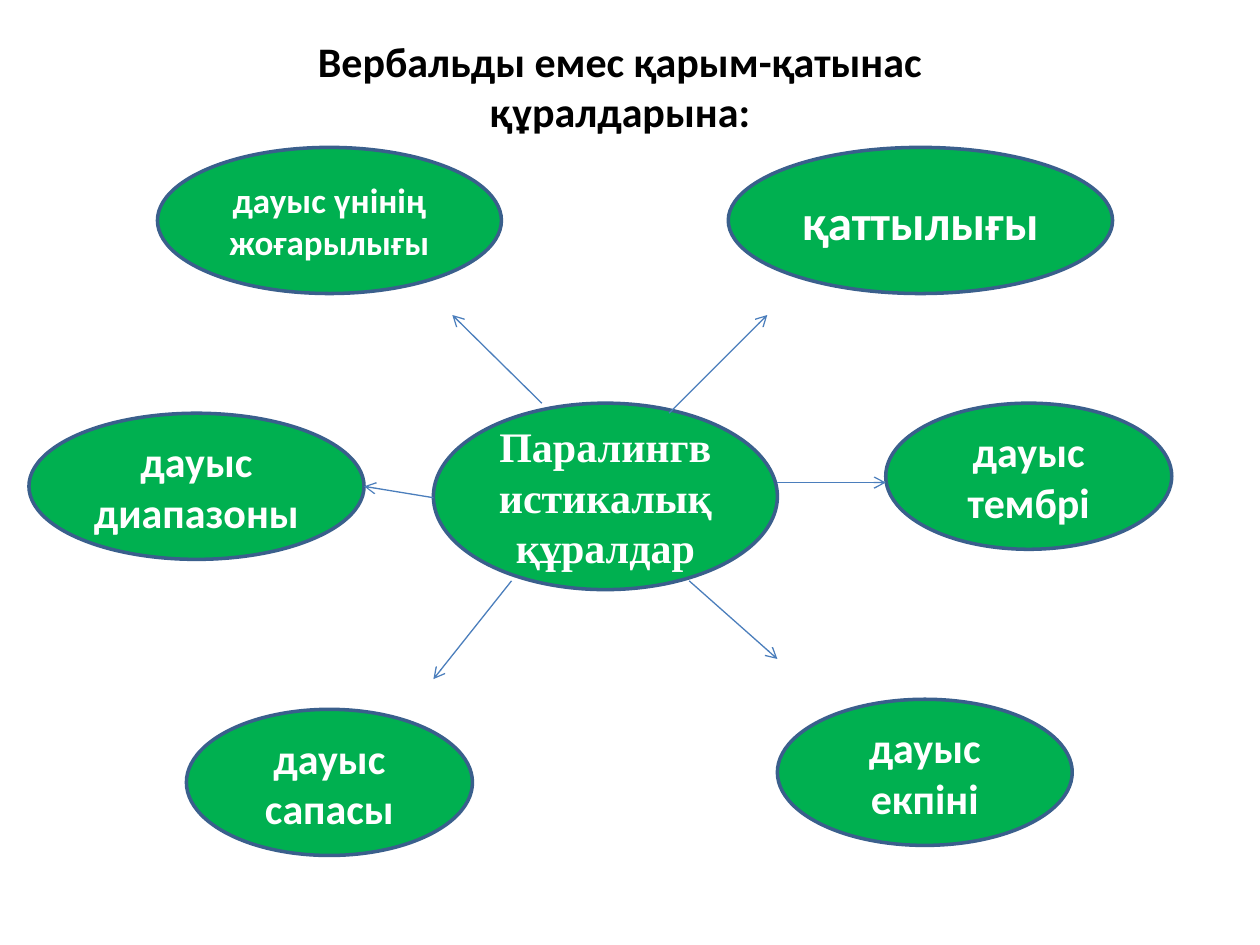
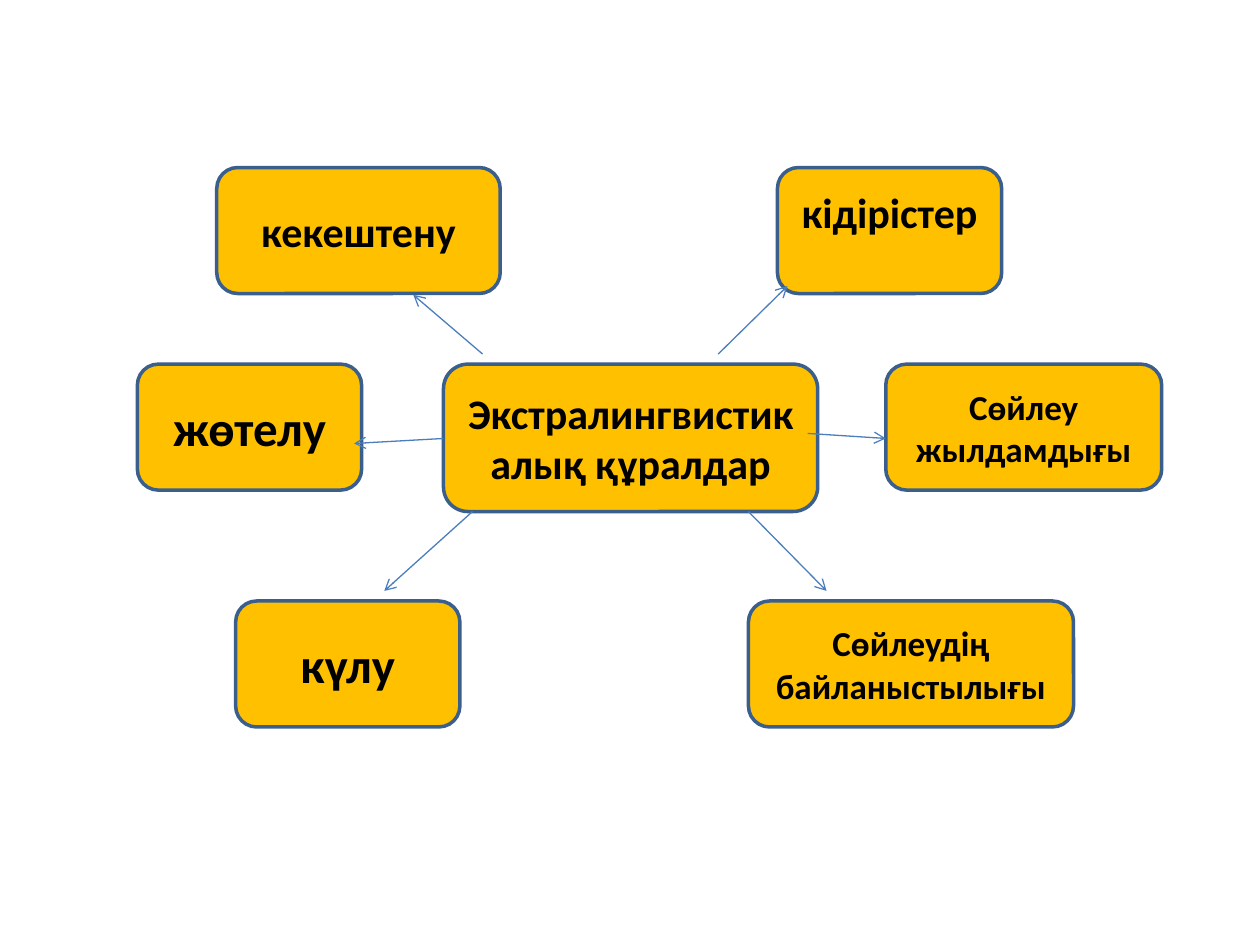
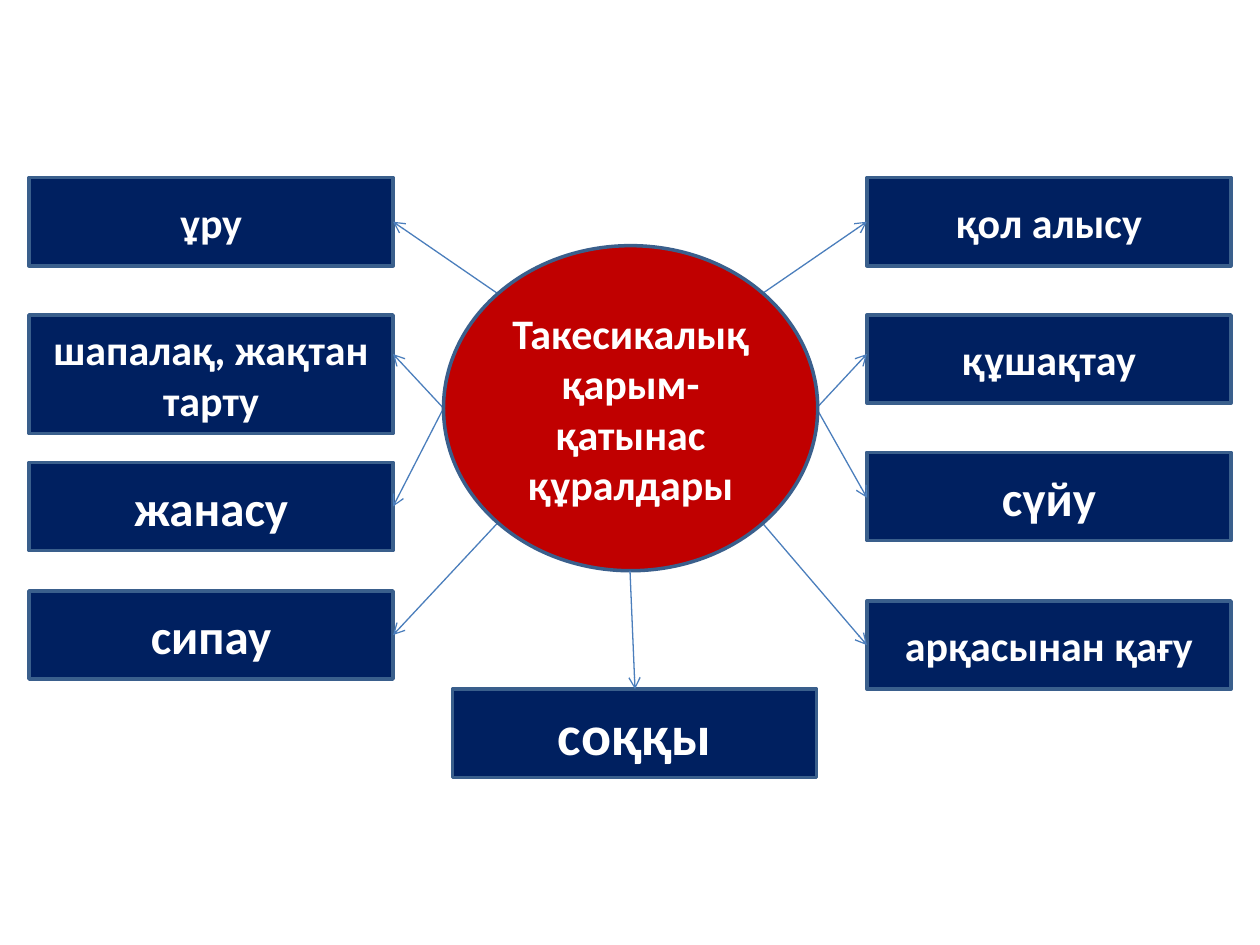
from dataclasses import dataclass

from lxml.etree import SubElement
from pptx import Presentation
from pptx.dml.color import RGBColor as Color
from pptx.enum.shapes import MSO_CONNECTOR as Connector, MSO_SHAPE as Shape
from pptx.enum.text import MSO_ANCHOR as Anchor, PP_ALIGN as Align
from pptx.oxml.ns import qn
from pptx.util import Inches, Pt


@dataclass(frozen=True)
class Theme:
    green: Color = Color.from_string("00B050")
    amber: Color = Color.from_string("FFC000")
    navy: Color = Color.from_string("002060")
    red: Color = Color.from_string("C00000")
    white: Color = Color.from_string("FFFFFF")
    black: Color = Color.from_string("000000")
    outline: Color = Color.from_string("3A5F8C")
    arrow: Color = Color.from_string("4B7EBC")
    sans: str = "Calibri"
    serif: str = "Times New Roman"
    small: int = 20
    medium: int = 24
    large: int = 28
    huge: int = 32


theme = Theme()


def add_node(page, kind, place, fill, text, size, color, font=theme.sans):
    """Add a shape with centred bold text; without a kind, a plain text box."""
    bounds = [Inches(length) for length in place]
    if kind is None:
        node = page.shapes.add_textbox(*bounds)
    else:
        node = page.shapes.add_shape(kind, *bounds)
        node.shadow.inherit = False
        node.fill.solid()
        node.fill.fore_color.rgb = fill
        node.line.color.rgb = theme.outline
        node.line.width = Pt(2)
        node.text_frame.vertical_anchor = Anchor.MIDDLE
    node.text_frame.word_wrap = True
    para = node.text_frame.paragraphs[0]
    para.text = text
    para.alignment = Align.CENTER
    para.font.name = font
    para.font.size = Pt(size)
    para.font.bold = True
    para.font.color.rgb = color
    return node


def add_arrow(page, start, end):
    """Add a thin line with an open arrowhead at its end."""
    points = [Inches(length) for length in (*start, *end)]
    arrow = page.shapes.add_connector(Connector.STRAIGHT, *points)
    arrow.line.color.rgb = theme.arrow
    arrow.line.width = Pt(0.75)
    SubElement(arrow.line._get_or_add_ln(), qn("a:tailEnd"), type="arrow")
    SubElement(arrow._element.spPr, qn("a:effectLst"))


deck = Presentation()
deck.slide_width, deck.slide_height = Inches(10), Inches(7.5)
blank = deck.slide_layouts[6]

# Slide 1: paralinguistic means
page = deck.slides.add_slide(blank)
add_node(page, None, (1.95, 0.23, 5.94, 0.91), None,
         "Вербальды емес қарым-қатынас құралдарына:", theme.medium, theme.black)

oval_height = 1.16
for left, top, width, text, size in [
    (5.78, 1.17, 3.05, "қаттылығы", theme.large),
    (7.03, 3.2, 2.27, "дауыс тембрі", theme.medium),
    (6.17, 5.55, 2.34, "дауыс екпіні", theme.medium),
    (1.25, 1.17, 2.73, "дауыс үнінің жоғарылығы", theme.small),
    (0.23, 3.28, 2.66, "дауыс диапазоны", theme.medium),
    (1.48, 5.63, 2.27, "дауыс сапасы", theme.medium),
]:
    add_node(page, Shape.OVAL, (left, top, width, oval_height),
             theme.green, text, size, theme.white)
add_node(page, Shape.OVAL, (3.44, 3.2, 2.73, 1.48), theme.green,
         "Паралингвистикалық құралдар", theme.medium, theme.white, theme.serif)

for start, end in [
    ((5.31, 3.28), (6.09, 2.5)),
    ((6.17, 3.83), (7.03, 3.83)),
    ((5.47, 4.61), (6.17, 5.23)),
    ((4.06, 4.61), (3.44, 5.39)),
    ((3.44, 3.95), (2.89, 3.86)),
    ((4.3, 3.2), (3.59, 2.5)),
]:
    add_arrow(page, start, end)

# Slide 2: extralinguistic means, in three rows
page = deck.slides.add_slide(blank)
add_node(page, Shape.ROUNDED_RECTANGLE, (3.52, 2.89, 2.97, 1.17), theme.amber,
         "Экстралингвистикалық құралдар", theme.medium, theme.black)

upper, middle, lower = 1.33, 2.89, 4.77
for left, top, width, text, size, space_below in [
    (6.17, upper, 1.78, "кідірістер", theme.medium, 0.35),
    (7.03, middle, 2.19, "Сөйлеу жылдамдығы", theme.small, 0.05),
    (5.94, lower, 2.58, "Сөйлеудің байланыстылығы", theme.small, 0.05),
    (1.72, upper, 2.25, "кекештену", theme.medium, 0.05),
    (1.09, middle, 1.78, "жөтелу", theme.large, 0.05),
    (1.87, lower, 1.78, "күлу", theme.large, 0.05),
]:
    box = add_node(page, Shape.ROUNDED_RECTANGLE, (left, top, width, 1),
                   theme.amber, text, size, theme.black)
    box.text_frame.margin_bottom = Inches(space_below)

for start, end in [
    ((5.7, 2.81), (6.25, 2.27)),
    ((6.41, 3.44), (7.03, 3.48)),
    ((5.94, 4.06), (6.56, 4.69)),
    ((3.75, 4.06), (3.05, 4.69)),
    ((3.52, 3.48), (2.81, 3.52)),
    ((3.83, 2.81), (3.28, 2.34)),
]:
    add_arrow(page, start, end)

# Slide 3: takesic means, two columns mirrored about the hub
page = deck.slides.add_slide(blank)
hub_center = 5
bar_width, bar_height = 2.89, 0.7
rim_points = [(1.05, 2.33), (1.48, 3.24), (1.48, 3.24), (1.05, 4.15)]
left_bars = [
    (1.41, bar_height, 1.76, "ұру", theme.medium),
    (2.5, 0.94, 2.81, "шапалақ, жақтан тарту", theme.medium),
    (3.67, bar_height, 4.02, "жанасу", theme.large),
    (4.69, bar_height, 5.04, "сипау", theme.large),
]
right_bars = [
    (1.41, bar_height, 1.76, "қол алысу", theme.medium),
    (2.5, bar_height, 2.81, "құшақтау", theme.medium),
    (3.59, bar_height, 3.95, "сүйу", theme.large),
    (4.77, bar_height, 5.12, "арқасынан қағу", theme.medium),
]
for side, left, inner_edge, bars in [
    (-1, 0.23, 3.12, left_bars),
    (1, 6.88, 6.88, right_bars),
]:
    for (reach, rim_y), (top, height, target_y, text, size) in zip(rim_points, bars):
        add_node(page, Shape.RECTANGLE, (left, top, bar_width, height),
                 theme.navy, text, size, theme.white)
        add_arrow(page, (hub_center + side * reach, rim_y), (inner_edge, target_y))

add_node(page, Shape.RECTANGLE, (3.59, 5.47, bar_width, bar_height),
         theme.navy, "соққы", theme.huge, theme.white)
add_node(page, Shape.OVAL, (3.52, 1.95, 2.97, 2.58), theme.red,
         "Такесикалық қарым-қатынас құралдары", theme.medium, theme.white)
add_arrow(page, (hub_center, 4.53), (5.04, 5.47))

deck.save("out.pptx")
